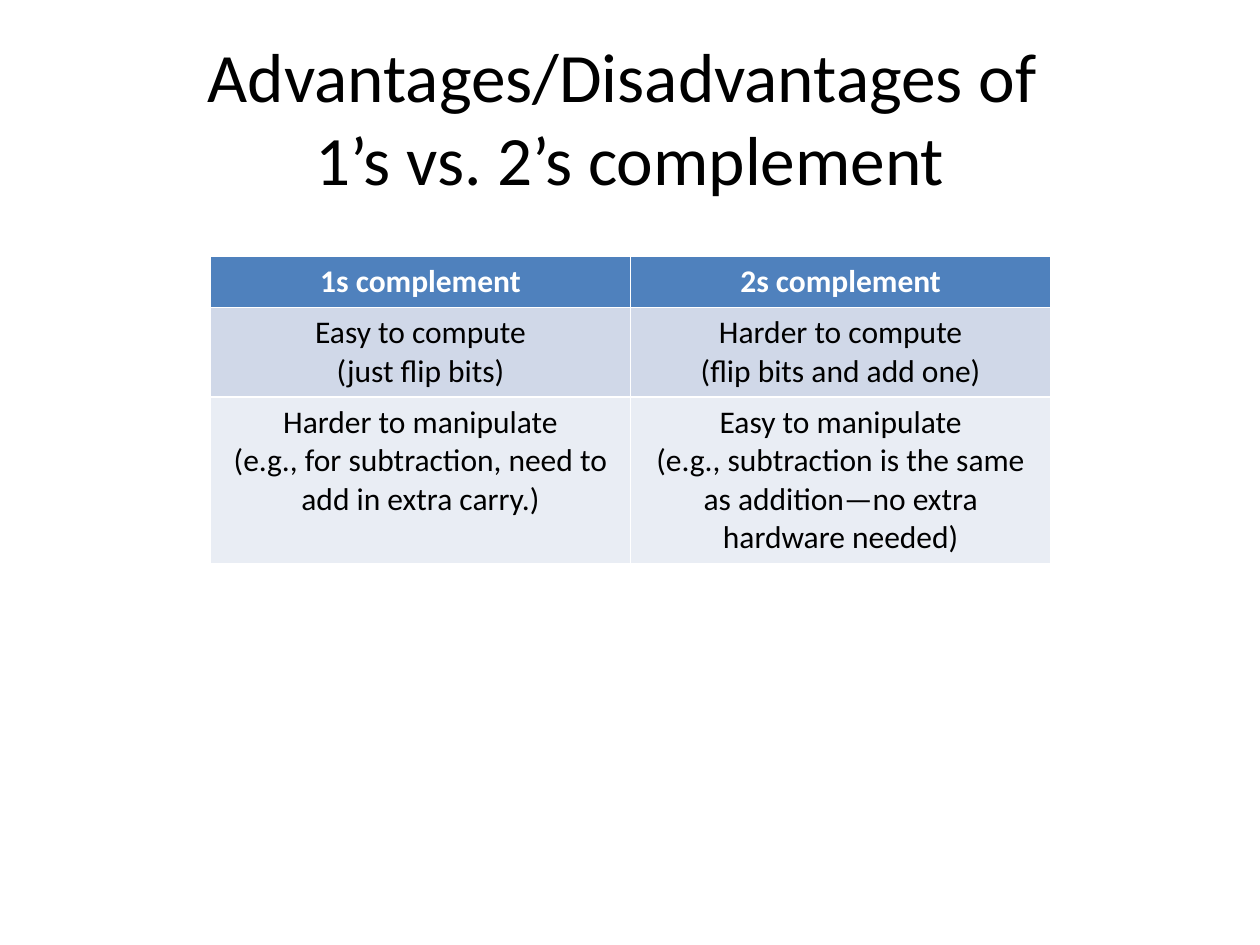
"""Build a slide comparing 1's and 2's complement in a table."""
from pptx import Presentation
from pptx.dml.color import RGBColor
from pptx.enum.text import MSO_ANCHOR as Anchor, MSO_AUTO_SIZE as Fit, PP_ALIGN as Align
from pptx.util import Inches, Pt

TITLE = "Advantages/Disadvantages of \v1’s vs. 2’s complement"
ROWS = [
    ("1s complement", "2s complement"),
    ("Easy to compute\n(just flip bits)",
     "Harder to compute\n(flip bits and add one)"),
    ("Harder to manipulate\n(e.g., for subtraction, need to add in extra carry.)",
     "Easy to manipulate\n(e.g., subtraction is the same as addition—no extra hardware needed)"),
]
HEIGHTS = [0.41, 0.7, 1.3]
COLORS = {"head": "4F81BD", "odd": "D0D8E8", "even": "E9EDF4",
          "light": "FFFFFF", "dark": "000000"}
FILLS = ["head", "odd", "even"]
FONT = "Calibri"


def style(frame, size, color, bold=False):
    for para in frame.paragraphs:
        para.alignment = Align.CENTER
        font = para.font
        font.name, font.size, font.bold = FONT, Pt(size), bold
        font.color.rgb = RGBColor.from_string(COLORS[color])


def add_title(slide):
    title = slide.shapes.title
    title.left, title.top = Inches(0.5), Inches(0.3)
    title.width, title.height = Inches(9), Inches(1.25)
    frame = title.text_frame
    frame.text = TITLE
    frame.auto_size = Fit.NONE
    frame.vertical_anchor = Anchor.MIDDLE
    style(frame, 39.6, "dark")


def add_grid(slide):
    grid = slide.shapes.add_table(
        len(ROWS), len(ROWS[0]), Inches(1.67), Inches(2.03),
        Inches(6.67), Inches(sum(HEIGHTS))).table
    for r, texts in enumerate(ROWS):
        grid.rows[r].height = Inches(HEIGHTS[r])
        head = r == 0
        for c, text in enumerate(texts):
            cell = grid.cell(r, c)
            cell.text = text
            cell.fill.solid()
            cell.fill.fore_color.rgb = RGBColor.from_string(COLORS[FILLS[r]])
            style(cell.text_frame, 18, "light" if head else "dark", head)


def main():
    deck = Presentation()
    deck.slide_width, deck.slide_height = Inches(10), Inches(7.5)
    slide = deck.slides.add_slide(deck.slide_layouts[5])
    add_title(slide)
    add_grid(slide)
    deck.save("out.pptx")


if __name__ == "__main__":
    main()
